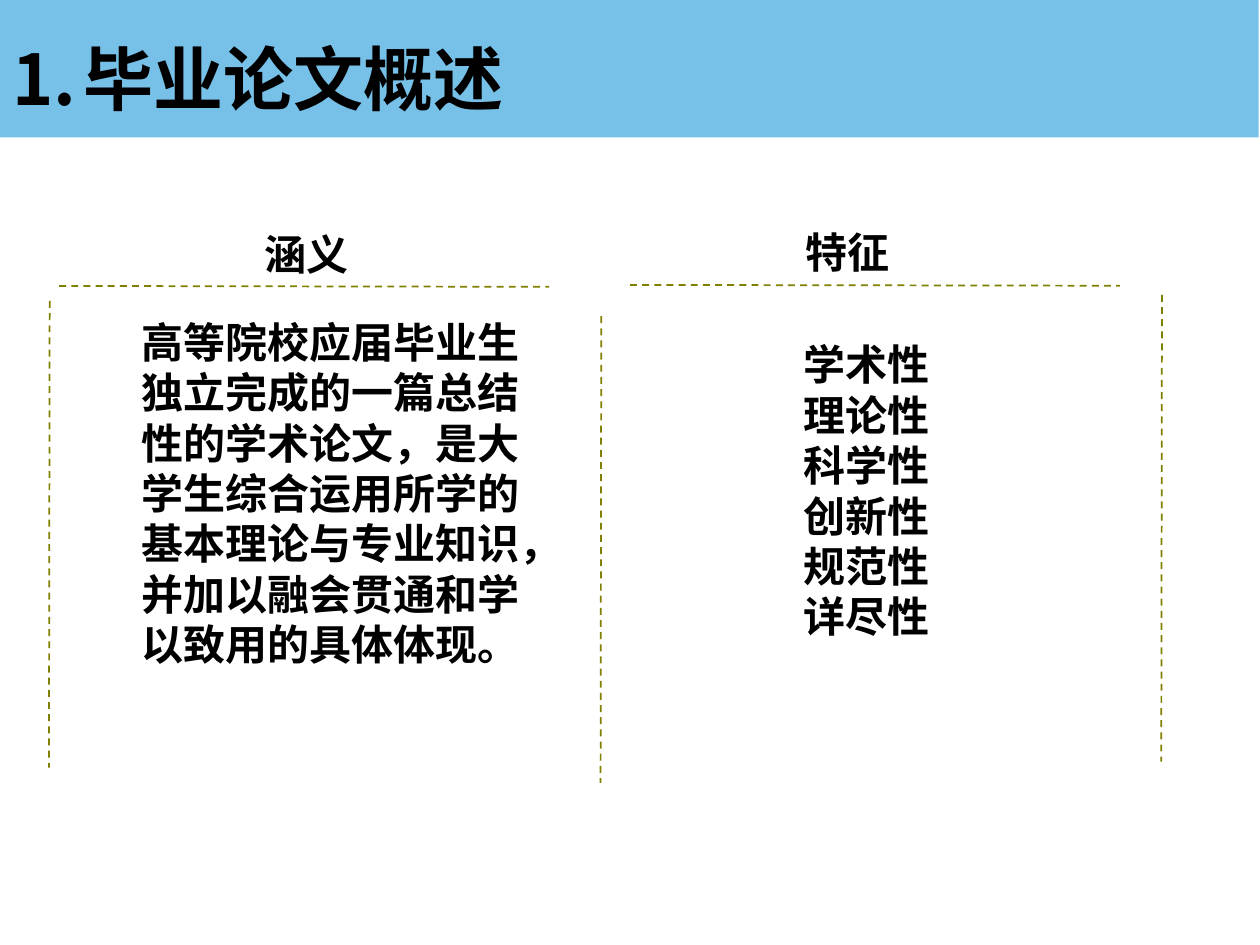
from lxml.etree import SubElement
from pptx import Presentation
from pptx.dml.color import RGBColor
from pptx.enum.dml import MSO_LINE
from pptx.enum.lang import MSO_LANGUAGE_ID as LANGUAGE
from pptx.enum.shapes import MSO_CONNECTOR, MSO_SHAPE
from pptx.enum.text import MSO_ANCHOR as ANCHOR, MSO_AUTO_SIZE as AUTO_SIZE, PP_ALIGN as ALIGN
from pptx.oxml.ns import qn
from pptx.util import Pt

TITLE = "毕业论文概述"
DEFINITION = ("高等院校应届毕业生独立完成的一篇总结性的学术论文，是大学生综合运用所学的"
              "基本理论与专业知识，并加以融会贯通和学以致用的具体体现。")
FEATURES = ["学术性", "理论性", "科学性", "创新性", "规范性", "详尽性"]

THEME = {
    "band": RGBColor(0x77, 0xC1, 0xE9),
    "rule": RGBColor(0x80, 0x80, 0x00),
    "panel": RGBColor(0xFF, 0xFF, 0xFF),
    "text": RGBColor(0x00, 0x00, 0x00),
    "heading_font": "Noto Sans CJK SC",
    "body_font": "Arial",
    "east_asian_font": "Noto Sans CJK SC",
    "title_size": 40,
    "text_size": 24,
}

# Boxes: left, top, width, height
BAND_BOX = (0, 0, 719.3, 78.5)
TITLE_BOX = (0, 16.5, 708.5, 55.7)
# Placeholder index: text, box, whether it is a panel, and its format
COLUMNS = {
    1: (["涵义"], (67.7, 112.3, 215.3, 46), False,
        dict(align=ALIGN.CENTER, line_spacing=1.5)),
    2: ([DEFINITION], (73.4, 180, 242, 205), True,
        dict(font="body_font", inset=0.7)),
    3: (["特征"], (376.6, 111.6, 215.3, 46), False,
        dict(align=ALIGN.CENTER, line_spacing=1.5)),
    4: (FEATURES, (416.2, 189.4, 146.2, 181.4), True,
        dict(font="body_font", align=ALIGN.JUSTIFY, anchor=ANCHOR.MIDDLE,
             margin=58.3, indent=-22.3)),
}
# Rules: start x, start y, length
HORIZONTAL_RULES = [(33.8, 163.4, 280), (360, 162.8, 280)]
VERTICAL_RULES = [(28.4, 172, 266.7), (343.6, 180.7, 266.7), (664, 168.5, 266.7)]


def place(shape, box):
    shape.left, shape.top, shape.width, shape.height = map(Pt, box)


def write(shape, lines, font="heading_font", size="text_size", align=ALIGN.LEFT,
          anchor=ANCHOR.TOP, inset=3.6, line_spacing=1.0, margin=0, indent=0,
          numbered=False):
    frame = shape.text_frame
    frame.text = "\n".join(lines)
    frame.word_wrap = True
    frame.auto_size = AUTO_SIZE.SHAPE_TO_FIT_TEXT
    frame.vertical_anchor = anchor
    frame.margin_left = frame.margin_right = Pt(7.2)
    frame.margin_top = frame.margin_bottom = Pt(inset)
    for paragraph in frame.paragraphs:
        paragraph.alignment = align
        paragraph.line_spacing = line_spacing
        paragraph.space_before = paragraph.space_after = Pt(0)
        properties = paragraph._p.get_or_add_pPr()
        properties.set("marL", str(Pt(margin)))
        properties.set("indent", str(Pt(indent)))
        if numbered:
            SubElement(properties, qn("a:buFont"), typeface="+mj-lt")
            SubElement(properties, qn("a:buAutoNum"), type="arabicPeriod")
        else:
            SubElement(properties, qn("a:buNone"))
        for run in paragraph.runs:
            run.font.size = Pt(THEME[size])
            run.font.bold = True
            run.font.color.rgb = THEME["text"]
            run.font.name = THEME[font]
            run.font.language_id = LANGUAGE.SIMPLIFIED_CHINESE
            SubElement(run.font._element, qn("a:ea"), typeface=THEME["east_asian_font"])


def add_band(slide):
    """Put the coloured title band behind the placeholders."""
    band = slide.shapes.add_shape(MSO_SHAPE.RECTANGLE, *map(Pt, BAND_BOX))
    band.shadow.inherit = False
    band.fill.solid()
    band.fill.fore_color.rgb = THEME["band"]
    band.line.fill.background()
    band.element.getparent().insert(2, band.element)


def add_rule(slide, x1, y1, x2, y2):
    rule = slide.shapes.add_connector(MSO_CONNECTOR.STRAIGHT, *map(Pt, (x1, y1, x2, y2)))
    rule.line.color.rgb = THEME["rule"]
    rule.line.width = Pt(1)
    rule.line.dash_style = MSO_LINE.DASH
    SubElement(rule.element.spPr, qn("a:effectLst"))


def main():
    presentation = Presentation()
    presentation.slide_width, presentation.slide_height = Pt(720), Pt(540)
    comparison_layout = presentation.slide_layouts[4]
    slide = presentation.slides.add_slide(comparison_layout)

    add_band(slide)
    title = slide.shapes.title
    place(title, TITLE_BOX)
    write(title, [TITLE], size="title_size", margin=40.5, indent=-40.5, numbered=True)

    for index, (lines, box, is_panel, text_format) in COLUMNS.items():
        placeholder = slide.placeholders[index]
        place(placeholder, box)
        if is_panel:
            placeholder.fill.solid()
            placeholder.fill.fore_color.rgb = THEME["panel"]
            placeholder.line.color.rgb = THEME["panel"]
            placeholder.line.width = Pt(0.75)
        write(placeholder, lines, **text_format)

    for x, y, length in HORIZONTAL_RULES:
        add_rule(slide, x, y, x + length, y + 0.5)
    for x, y, length in VERTICAL_RULES:
        add_rule(slide, x, y, x - 0.4, y + length)

    presentation.save("out.pptx")


if __name__ == "__main__":
    main()
